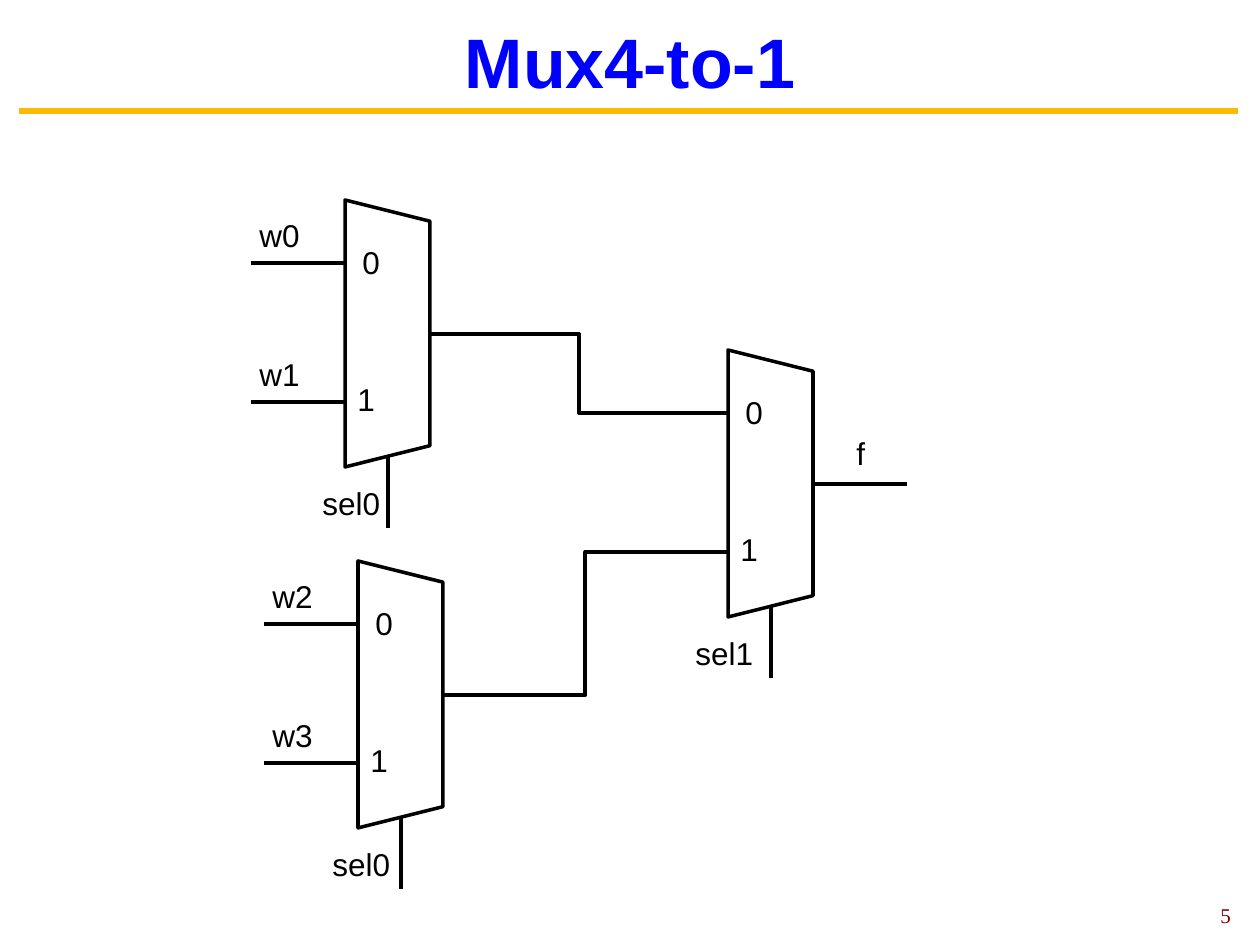
from pptx import Presentation
from pptx.dml.color import RGBColor
from pptx.enum.shapes import MSO_CONNECTOR as Connector, MSO_SHAPE as Shape
from pptx.enum.text import MSO_ANCHOR as Anchor, PP_ALIGN as Align
from pptx.oxml.ns import qn
from pptx.util import Emu, Pt
from lxml.etree import SubElement

BLACK = RGBColor(0x00, 0x00, 0x00)
WHITE = RGBColor(0xFF, 0xFF, 0xFF)
BLUE = RGBColor(0x00, 0x00, 0xFF)
GOLD = RGBColor(0xFB, 0xBA, 0x03)
MAROON = RGBColor(0x80, 0x00, 0x00)

# Content: each mux by its left top corner, input names and select name
TITLE = "Mux4-to-1"
PAGE_NUMBER = "5"
MUXES = [
    {"at": (345, 200), "inputs": ("w0", "w1"), "select": "sel0", "select_dx": -35},
    {"at": (358, 561), "inputs": ("w2", "w3"), "select": "sel0", "select_dx": -38},
    {"at": (728, 350), "inputs": (), "select": "sel1", "select_dx": -45},
]
OUTPUT = "f"

# Mux geometry in px, measured from its left top corner
MUX_WIDTH, MUX_HEIGHT = 85, 267
INPUT_YS = (63, 202)
PORT_OFFSETS = ((5, -26), (0, -28))  # digit boxes from the input points
OUTPUT_Y = 134
WIRE = 94
SELECT_X, SELECT_TOP, SELECT_BOTTOM = 43, 257, 328
LABEL_WIDTH, LABEL_HEIGHT = 145, 50


def px(value):
    return Emu(round(value * 914400 / 126))


def style_text(frame, size, color, font="Arial", bold=False, align=Align.LEFT):
    paragraph = frame.paragraphs[0]
    paragraph.alignment = align
    font_format = paragraph.runs[0].font
    font_format.name, font_format.size, font_format.bold = font, Pt(size), bold
    font_format.color.rgb = color


def add_label(slide, text, x, y, width=LABEL_WIDTH):
    box = slide.shapes.add_textbox(px(x), px(y), px(width), px(LABEL_HEIGHT))
    box.text_frame.word_wrap = True
    box.text_frame.text = text
    style_text(box.text_frame, 18, BLACK)


def add_line(slide, start, end, kind=Connector.STRAIGHT, color=BLACK, width=2.25):
    line = slide.shapes.add_connector(kind, *map(px, (*start, *end)))
    line.line.color.rgb = color
    line.line.width = Pt(width)
    SubElement(line._element.spPr, qn("a:effectLst"))


def add_mux(slide, at, inputs, select, select_dx):
    x, y = at
    # Body: a trapezoid turned a quarter about its centre
    shift = (MUX_HEIGHT - MUX_WIDTH) / 2
    body = slide.shapes.add_shape(
        Shape.TRAPEZOID, px(x - shift), px(y + shift), px(MUX_HEIGHT), px(MUX_WIDTH))
    body.rotation = 90
    body.shadow.inherit = False
    body.fill.solid()
    body.fill.fore_color.rgb = WHITE
    body.line.color.rgb = BLACK
    body.line.width = Pt(2)

    # Inputs with their port digits
    for port, (input_y, (dx, dy)) in enumerate(zip(INPUT_YS, PORT_OFFSETS)):
        add_line(slide, (x - WIRE, y + input_y), (x, y + input_y))
        add_label(slide, str(port), x + dx, y + input_y + dy, 60)
    for name, input_y in zip(inputs, INPUT_YS):
        add_label(slide, name, x - 98, y + input_y - 53)

    # Select line
    add_line(slide, (x + SELECT_X, y + SELECT_TOP), (x + SELECT_X, y + SELECT_BOTTOM))
    add_label(slide, select, x + select_dx, y + 278)


def main():
    presentation = Presentation()
    presentation.slide_width, presentation.slide_height = px(1260), px(945)
    slide = presentation.slides.add_slide(presentation.slide_layouts[5])

    # Title and rule
    title = slide.shapes.title
    title.left, title.top, title.width, title.height = map(px, (24, 18, 1212, 84))
    title.text_frame.text = TITLE
    title.text_frame.vertical_anchor = Anchor.MIDDLE
    style_text(title.text_frame, 40, BLUE, bold=True, align=Align.CENTER)
    add_line(slide, (19, 111), (1238, 111), color=GOLD, width=3.75)

    # Muxes
    for mux in MUXES:
        add_mux(slide, **mux)

    # Outputs of the first two muxes feed the last one
    *sources, (last_x, last_y) = [mux["at"] for mux in MUXES]
    for (x, y), input_y in zip(sources, INPUT_YS):
        add_line(slide, (x + MUX_WIDTH, y + OUTPUT_Y), (last_x, last_y + input_y),
                 Connector.ELBOW)
    output_x, output_y = last_x + MUX_WIDTH, last_y + OUTPUT_Y
    add_line(slide, (output_x, output_y), (output_x + WIRE, output_y))
    add_label(slide, OUTPUT, output_x + 31, output_y - 56)

    # Page number
    number = slide.shapes.add_textbox(px(1208), px(901), px(33), px(29))
    number.text_frame.word_wrap = False
    number.text_frame.vertical_anchor = Anchor.MIDDLE
    number.text_frame.text = PAGE_NUMBER
    style_text(number.text_frame, 12, MAROON, "Times New Roman", align=Align.CENTER)

    presentation.save("out.pptx")


if __name__ == "__main__":
    main()
